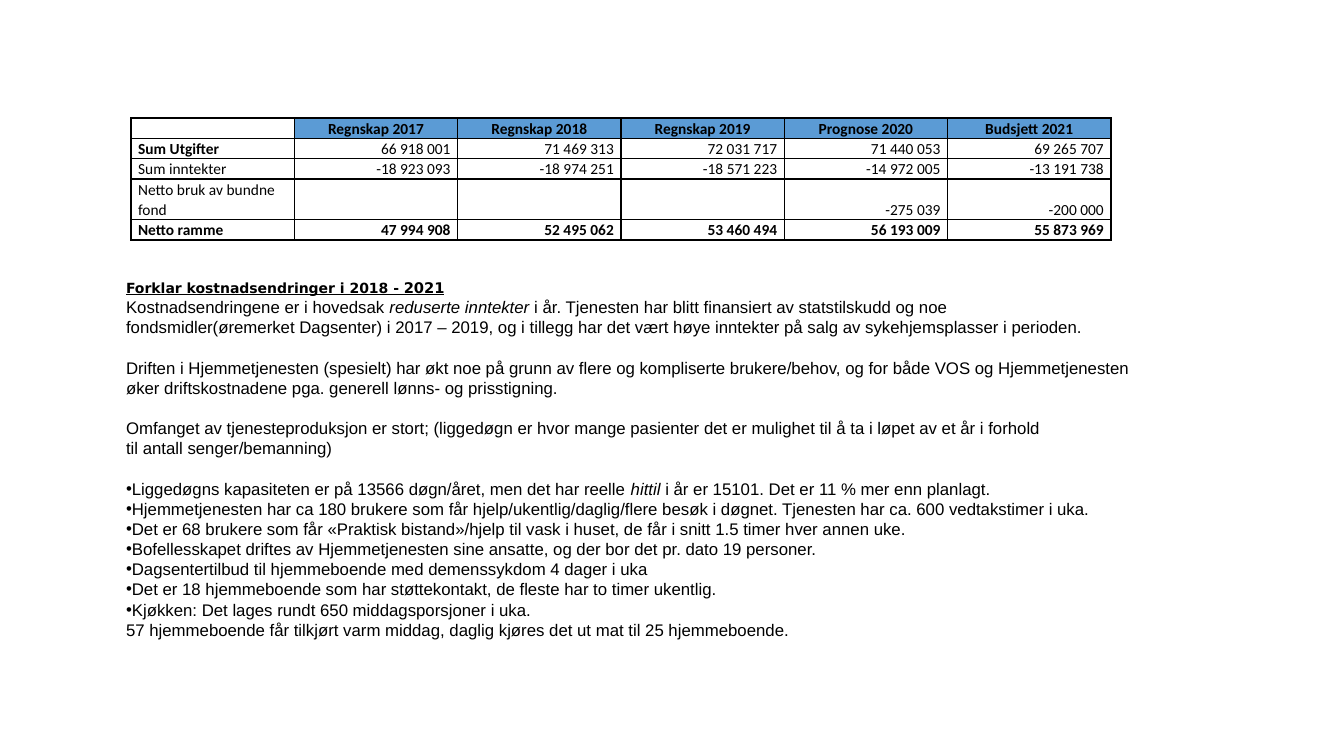
from lxml.etree import SubElement
from pptx import Presentation
from pptx.dml.color import RGBColor
from pptx.enum.text import MSO_ANCHOR, MSO_AUTO_SIZE, PP_ALIGN
from pptx.oxml.ns import qn
from pptx.util import Inches, Pt

BLACK = RGBColor(0x00, 0x00, 0x00)
BLUE = RGBColor(0x5B, 0x9B, 0xD5)
LINE = Pt(14.4)

deck = Presentation()
deck.slide_width = Inches(13.33)
deck.slide_height = Inches(7.5)
slide = deck.slides.add_slide(deck.slide_layouts[1])
title = slide.shapes.title._element
title.getparent().remove(title)


def style(para, name, size, bold=False):
    para.font.name = name
    para.font.size = Pt(size)
    para.font.bold = bold
    para.font.color.rgb = BLACK


def border(cell):
    props = cell._tc.get_or_add_tcPr()
    for spot, side in enumerate(("lnL", "lnR", "lnT", "lnB")):
        edge = props.makeelement(qn("a:" + side), {"w": str(Pt(1))})
        fill = SubElement(edge, qn("a:solidFill"))
        SubElement(fill, qn("a:srgbClr"), val=str(BLACK))
        props.insert(spot, edge)


# Budget table
rows = [
    ["", "Regnskap 2017", "Regnskap 2018", "Regnskap 2019", "Prognose 2020", "Budsjett 2021"],
    ["Sum Utgifter", "66 918 001", "71 469 313", "72 031 717", "71 440 053", "69 265 707"],
    ["Sum inntekter", "-18 923 093", "-18 974 251", "-18 571 223", "-14 972 005", "-13 191 738"],
    ["Netto bruk av bundne fond", "", "", "", "-275 039", "-200 000"],
    ["Netto ramme", "47 994 908", "52 495 062", "53 460 494", "56 193 009", "55 873 969"],
]
frame = slide.shapes.add_table(len(rows), len(rows[0]), Inches(1.3), Inches(1.17),
                               Inches(9.72), Inches(1.2))
table = frame.table
table.horz_banding = False
for col in table.columns:
    col.width = Inches(1.62)
for r, row in enumerate(rows):
    table.rows[r].height = Inches(0.4 if r == 3 else 0.2)
    for c, text in enumerate(row):
        cell = table.cell(r, c)
        cell.text = text
        cell.margin_left = cell.margin_right = Inches(0.07)
        cell.margin_top = cell.margin_bottom = 0
        cell.vertical_anchor = MSO_ANCHOR.BOTTOM if c else MSO_ANCHOR.TOP
        if r == 0 and c:
            cell.fill.solid()
            cell.fill.fore_color.rgb = BLUE
        else:
            cell.fill.background()
        border(cell)
        para = cell.text_frame.paragraphs[0]
        para.line_spacing = 1.07
        if c:
            para.alignment = PP_ALIGN.RIGHT if r else PP_ALIGN.CENTER
        style(para, "Calibri", 11, r in (0, 4) or (r == 1 and c == 0))
        if not text:
            SubElement(para._p, qn("a:endParaRPr"), sz="1100")

# Explanation: (bullet, gap above, runs); every second run is italic
notes = [
    (False, False, ["Kostnadsendringene er i hovedsak ", "reduserte inntekter",
                    " i år. Tjenesten har blitt finansiert av statstilskudd og noe \n"
                    "fondsmidler(øremerket Dagsenter) i 2017 – 2019, og i tillegg har det vært "
                    "høye inntekter på salg av sykehjemsplasser i perioden."]),
    (False, True, ["Driften i Hjemmetjenesten (spesielt) har økt noe på grunn av flere og "
                   "kompliserte brukere/behov, og for både VOS og Hjemmetjenesten \n"
                   "øker driftskostnadene pga. generell lønns- og prisstigning."]),
    (False, True, ["Omfanget av tjenesteproduksjon er stort; (liggedøgn er hvor mange pasienter "
                   "det er mulighet til å ta i løpet av et år i forhold \n"
                   "til antall senger/bemanning)"]),
    (True, True, ["Liggedøgns kapasiteten er på 13566 døgn/året, men det har reelle ", "hittil ",
                  "i år er 15101. Det er 11 % mer enn planlagt."]),
    (True, False, ["Hjemmetjenesten har ca 180 brukere som får hjelp/ukentlig/daglig/flere besøk "
                   "i døgnet. Tjenesten har ca. 600 vedtakstimer i uka."]),
    (True, False, ["Det er 68 brukere som får «Praktisk bistand»/hjelp til vask i huset, "
                   "de får i snitt 1.5 timer hver annen uke."]),
    (True, False, ["Bofellesskapet driftes av Hjemmetjenesten sine ansatte, "
                   "og der bor det pr. dato 19 personer."]),
    (True, False, ["Dagsentertilbud til hjemmeboende med demenssykdom 4 dager i uka"]),
    (True, False, ["Det er 18 hjemmeboende som har støttekontakt, "
                   "de fleste har to timer ukentlig."]),
    (True, False, ["Kjøkken: Det lages rundt 650 middagsporsjoner i uka."]),
    (False, False, ["57 hjemmeboende får tilkjørt varm middag, "
                    "daglig kjøres det ut mat til 25 hjemmeboende."]),
]
body = slide.placeholders[1]
body.left, body.top = Inches(1.15), Inches(2.69)
body.width, body.height = Inches(12.1), Inches(3.71)
box = body.text_frame
box.word_wrap = True
box.auto_size = MSO_AUTO_SIZE.NONE
box.vertical_anchor = MSO_ANCHOR.MIDDLE

# Heading
head = box.paragraphs[0]
style(head, "DejaVu Sans", 10, True)
head.font.underline = True
for text, size in (("Forklar kostnadsendringer i 2018 - ", 10), ("2021", 10.5)):
    run = head.add_run()
    run.text = text
    run.font.size = Pt(size)

# Paragraphs and list
for bullet, gap, runs in notes:
    para = box.add_paragraph()
    style(para, "Arial", 12)
    para.space_before = LINE if gap else 0
    for n, text in enumerate(runs):
        for k, part in enumerate(text.split("\n")):
            if k:
                para.add_line_break()
            run = para.add_run()
            run.text = part
            if n % 2:
                run.font.italic = True

# Line spacing, indents and bullets
flags = [False] + [note[0] for note in notes]
for para, bullet in zip(box.paragraphs, flags):
    para.alignment = PP_ALIGN.LEFT
    para.line_spacing = LINE
    if para is head or para._p is head._p:
        para.space_before = 0
    props = para._p.get_or_add_pPr()
    props.set("marL", "0")
    props.set("indent", "0")
    mark = props.makeelement(qn("a:buChar"), {"char": "•"}) if bullet \
        else props.makeelement(qn("a:buNone"), {})
    props.find(qn("a:defRPr")).addprevious(mark)

deck.save("out.pptx")
